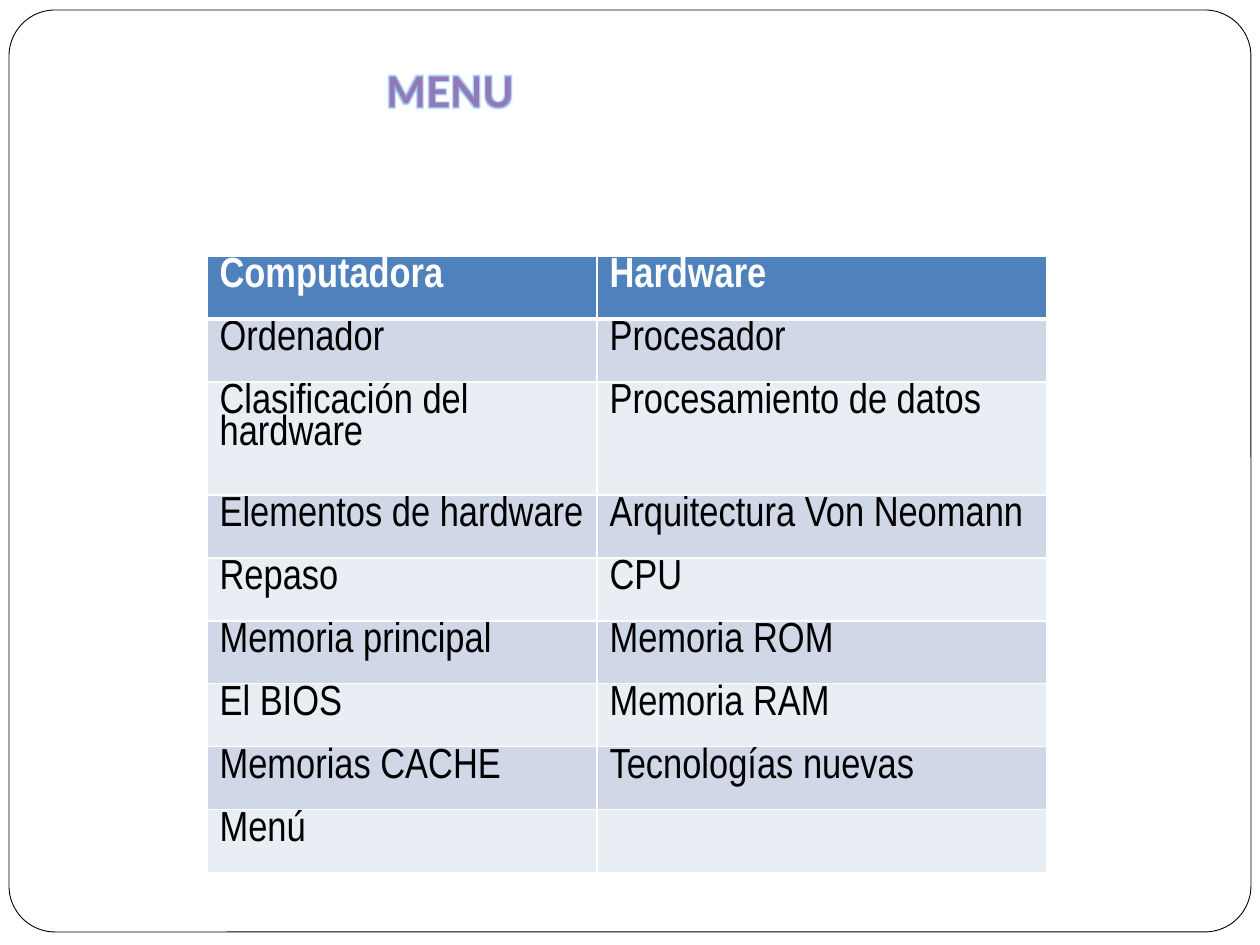
from lxml import etree
from pptx import Presentation
from pptx import util as u
from pptx.dml.color import RGBColor
from pptx.enum import shapes, text
from pptx.oxml.ns import qn

PX = u.Inches(1) // 126
COLORS = {"paper": "FFFFFF", "ink": "000000", "header": "4F81BD",
          "band_dark": "D0D8E8", "band_light": "E9EDF4",
          "title_edge": "B099D2", "title_core": "9379B5", "glow": "9BC7F5"}
TOPICS = [
    ("Computadora", "Hardware"),
    ("Ordenador", "Procesador"),
    ("Clasificación del hardware", "Procesamiento de datos"),
    ("Elementos de hardware", "Arquitectura Von Neomann"),
    ("Repaso", "CPU"),
    ("Memoria principal", "Memoria ROM"),
    ("El BIOS", "Memoria RAM"),
    ("Memorias CACHE", "Tecnologías nuevas"),
    ("Menú", ""),
]
COLUMN_WIDTHS = (390, 450)
ROW_HEIGHT, TWO_LINE_HEIGHT = 63, 113


def rgb(name):
    return RGBColor.from_string(COLORS[name])


def emu(box):
    return [length * PX for length in box]


def set_format(target, values):
    for attribute, value in values.items():
        setattr(target, attribute, value)


def add_color(parent, name):
    etree.SubElement(parent, qn("a:srgbClr"), val=COLORS[name])


def add_frame(slide, box):
    frame = slide.shapes.add_shape(shapes.MSO_SHAPE.ROUNDED_RECTANGLE, *emu(box))
    frame.adjustments[0] = 0.05
    frame.shadow.inherit = False
    frame.fill.solid()
    frame.fill.fore_color.rgb = rgb("paper")
    frame.line.color.rgb = rgb("ink")
    frame.line.width = u.Pt(0.5)


def add_title(slide, box):
    """Heading with a vertical gradient and a soft glow around its letters."""
    heading = slide.shapes.add_textbox(*emu(box)).text_frame
    heading.word_wrap = True
    run = heading.paragraphs[0].add_run()
    run.text = "MENU"
    set_format(run.font, {"size": u.Pt(24), "bold": True, "name": "Lato"})

    gradient = etree.Element(qn("a:gradFill"))
    stops = etree.SubElement(gradient, qn("a:gsLst"))
    for percent, name in ((0, "title_edge"), (40, "title_core"), (50, "title_core"),
                          (68, "title_core"), (100, "title_edge")):
        add_color(etree.SubElement(stops, qn("a:gs"), pos=str(percent * 1000)), name)
    etree.SubElement(gradient, qn("a:lin"), ang="5400000")
    effects = etree.Element(qn("a:effectLst"))
    add_color(etree.SubElement(effects, qn("a:glow"), rad=str(u.Pt(4))), "glow")
    properties = run.font._element
    properties.insert(0, gradient)
    properties.insert(1, effects)


def set_borders(cell, widths):
    """Give white borders, in points, keyed by side: L, R, T, B."""
    properties = cell._tc.get_or_add_tcPr()
    for position, (side, width) in enumerate(widths.items()):
        border = etree.Element(qn(f"a:ln{side}"), w=str(u.Pt(width)))
        add_color(etree.SubElement(border, qn("a:solidFill")), "paper")
        properties.insert(position, border)


def fill_cell(cell, topic, row):
    is_header = row == 0
    band = "header" if is_header else "band_dark" if row % 2 else "band_light"
    cell.fill.solid()
    cell.fill.fore_color.rgb = rgb(band)
    set_borders(cell, {"L": 1, "R": 1, "T": 3 if row == 1 else 1,
                       "B": 3 if is_header else 1})
    paragraph = cell.text_frame.paragraphs[0]
    paragraph.line_spacing = 0.8
    if topic:
        run = paragraph.add_run()
        run.text = topic
        set_format(run.font, {"size": u.Pt(24), "name": "Arial Narrow", "bold": is_header})
        run.font.color.rgb = rgb("paper" if is_header else "ink")


def add_topics(slide, left, top):
    heights = [TWO_LINE_HEIGHT if row == 2 else ROW_HEIGHT for row in range(len(TOPICS))]
    box = (left, top, sum(COLUMN_WIDTHS), sum(heights))
    table = slide.shapes.add_table(len(TOPICS), len(COLUMN_WIDTHS), *emu(box)).table
    table.horz_banding = False
    for column, width in zip(table.columns, COLUMN_WIDTHS):
        column.width = width * PX
    for row, (topics, height) in enumerate(zip(TOPICS, heights)):
        table.rows[row].height = height * PX
        for column, topic in enumerate(topics):
            fill_cell(table.cell(row, column), topic, row)


def main():
    deck = Presentation()
    set_format(deck, {"slide_width": 1260 * PX, "slide_height": 945 * PX})
    slide = deck.slides.add_slide(deck.slide_layouts[6])
    add_frame(slide, (9, 10, 1242, 922))
    add_title(slide, (374, 59, 532, 137))
    add_topics(slide, 207, 256)
    deck.save("out.pptx")


if __name__ == "__main__":
    main()
